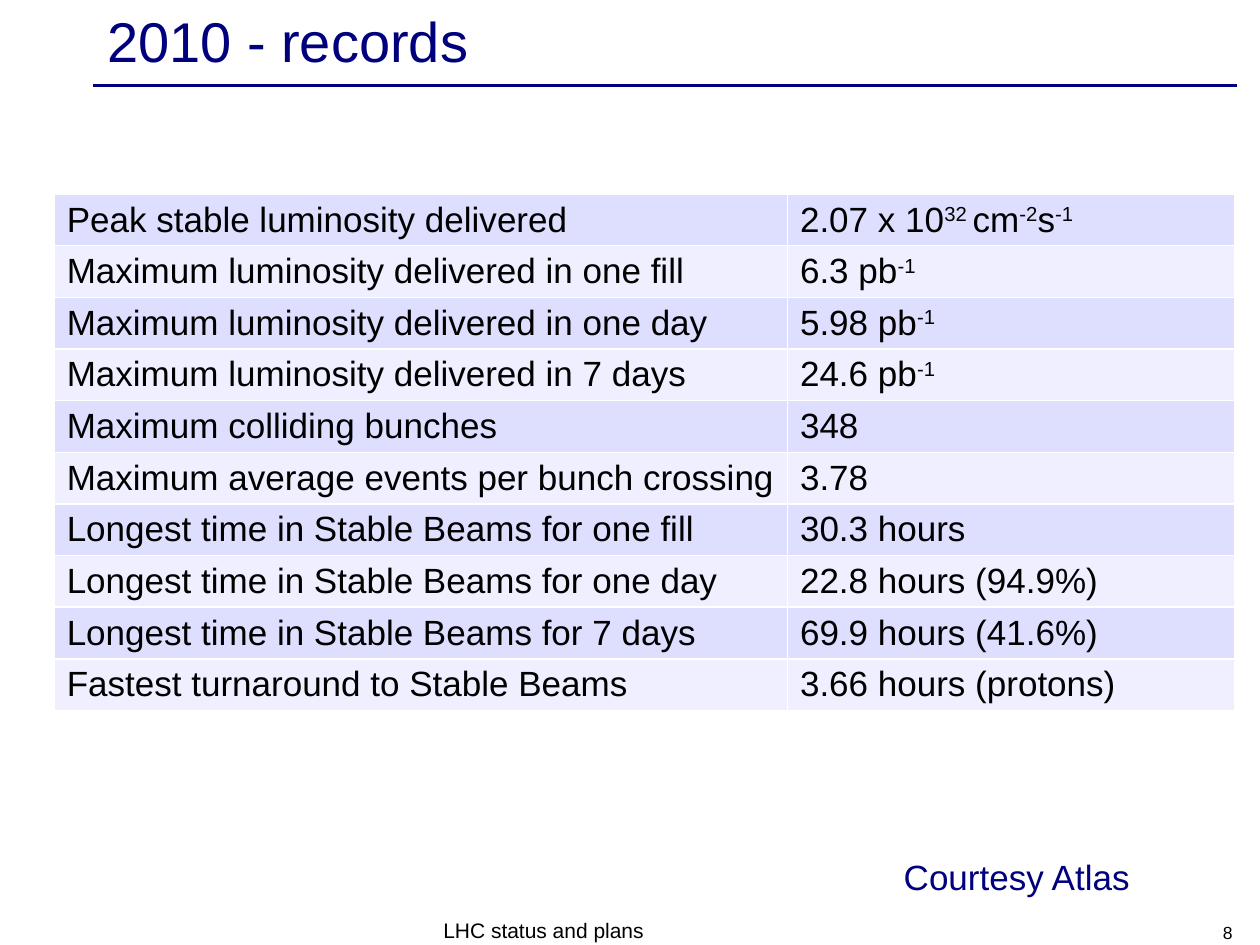
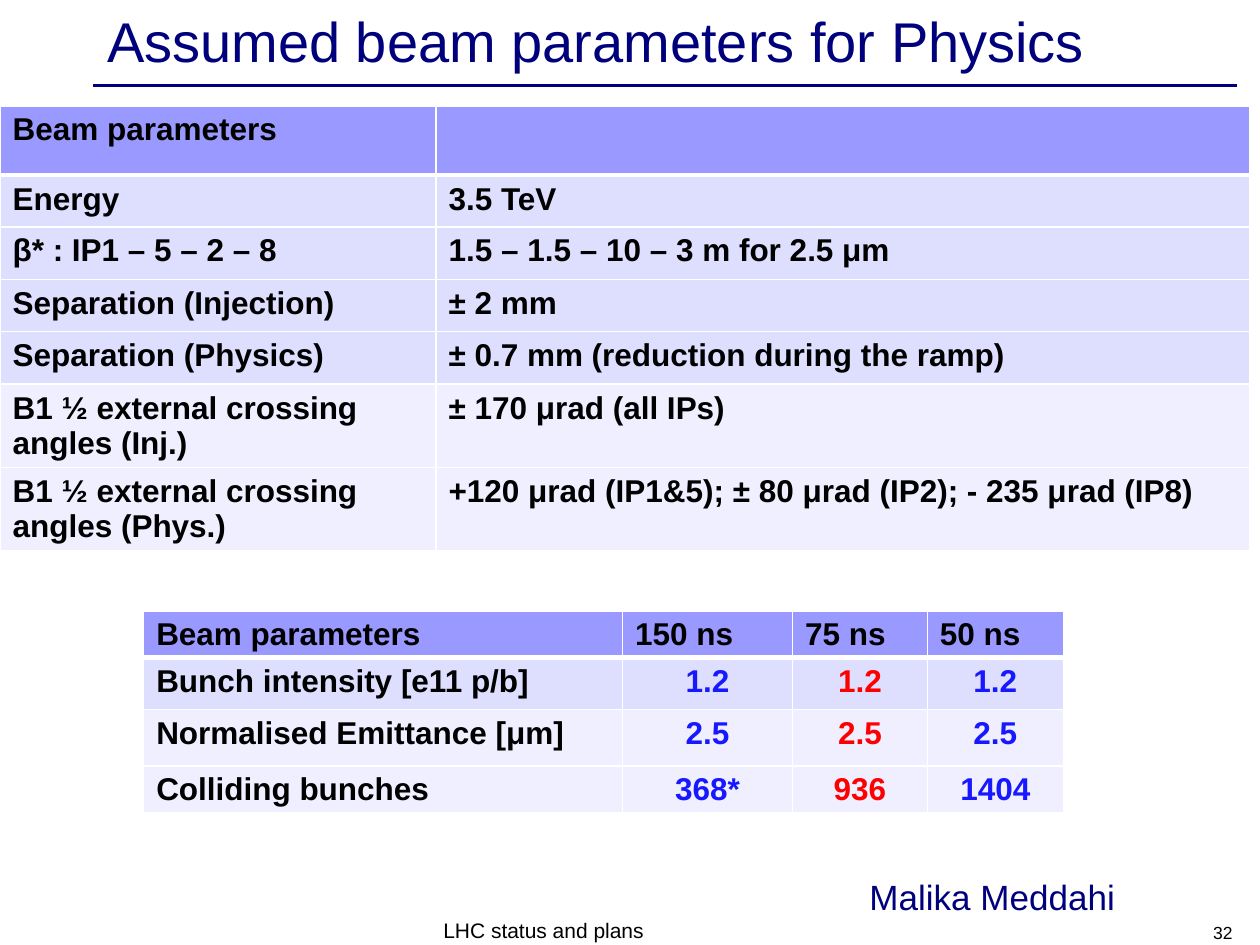
from dataclasses import dataclass

from lxml.etree import SubElement
from pptx import Presentation
from pptx.dml.color import RGBColor
from pptx.enum.shapes import MSO_CONNECTOR as Connector
from pptx.enum.text import MSO_ANCHOR as Anchor, PP_ALIGN as Align
from pptx.oxml import parse_xml
from pptx.oxml.ns import nsdecls, qn
from pptx.util import Inches, Pt


@dataclass(frozen=True)
class Theme:
    """Colours, font and type sizes shared by all slides."""

    font: str = "Arial"
    navy: str = "00007D"
    black: str = "000000"
    white: str = "FFFFFF"
    blue: str = "1818FF"
    red: str = "FF0000"
    header: str = "9999FF"
    band: str = "DEDEFF"
    pale: str = "EFEFFF"
    title_size: int = 32
    large_size: int = 20
    table_size: int = 18
    footer_size: int = 12
    number_size: int = 10
    thin: int = 1
    thick: int = 3


THEME = Theme()

RECORDS = [
    ("Peak stable luminosity delivered", "2.07 x 10^32 ^cm^-2^s^-1"),
    ("Maximum luminosity delivered in one fill", "6.3 pb^-1"),
    ("Maximum luminosity delivered in one day", "5.98 pb^-1"),
    ("Maximum luminosity delivered in 7 days", "24.6 pb^-1"),
    ("Maximum colliding bunches", "348"),
    ("Maximum average events per bunch crossing", "3.78"),
    ("Longest time in Stable Beams for one fill", "30.3 hours"),
    ("Longest time in Stable Beams for one day", "22.8 hours (94.9%)"),
    ("Longest time in Stable Beams for 7 days", "69.9 hours (41.6%)"),
    ("Fastest turnaround to Stable Beams", "3.66 hours (protons)"),
]

BEAM_SETTINGS = [
    ("Beam parameters", ""),
    ("Energy", "3.5 TeV"),
    ("β* : IP1 – 5 – 2 – 8", "1.5 – 1.5 – 10 – 3 m for 2.5 μm"),
    ("Separation (Injection)", "± 2 mm"),
    ("Separation (Physics)", "± 0.7 mm (reduction during the ramp)"),
    ("B1 ½ external crossing angles (Inj.)", "± 170 μrad (all IPs)"),
    ("B1 ½ external crossing angles (Phys.)",
     "+120 μrad (IP1&5); ± 80 μrad (IP2); - 235 μrad (IP8)"),
]

BUNCH_SPACINGS = [
    ("Beam parameters", "150 ns", "75 ns", "50 ns"),
    ("Bunch intensity [e11 p/b]", "1.2", "1.2", "1.2"),
    ("Normalised Emittance [μm]", "2.5", "2.5", "2.5"),
    ("Colliding bunches", "368*", "936", "1404"),
]


def write_text(frame, text, size, color=THEME.black, bold=False,
               align=Align.LEFT, anchor=Anchor.TOP):
    """Write one paragraph, raising every second part between carets."""
    frame.word_wrap = True
    frame.vertical_anchor = anchor
    para = frame.paragraphs[0]
    para.alignment = align
    para.space_before = Pt(0)
    for index, part in enumerate(text.split("^")):
        span = para.add_run()
        span.text = part
        span.font.name = THEME.font
        span.font.size = Pt(size)
        span.font.bold = bold
        span.font.color.rgb = RGBColor.from_string(color)
        if index % 2:
            span.font._element.set("baseline", "30000")


def add_text(page, text, left, top, width, height, **text_format):
    """Add a text box holding one formatted paragraph."""
    box = page.shapes.add_textbox(
        Inches(left), Inches(top), Inches(width), Inches(height))
    write_text(box.text_frame, text, **text_format)


def add_rule(page):
    """Draw the square-ended line under the title."""
    rule = page.shapes.add_connector(
        Connector.STRAIGHT, Inches(0.75), Inches(0.68), Inches(9.8), Inches(0.68))
    rule.line.color.rgb = RGBColor.from_string(THEME.navy)
    rule.line.width = Pt(2)
    rule._element.spPr.find(qn("a:ln")).set("cap", "sq")
    SubElement(rule._element.spPr, qn("a:effectLst"))


def add_page(deck, title, number):
    """Add a slide with its title, rule, footer and number."""
    page = deck.slides.add_slide(deck.slide_layouts[5])
    heading = page.shapes.title
    heading.left, heading.top = Inches(0.75), Inches(0.03)
    heading.width, heading.height = Inches(9), Inches(0.57)
    write_text(heading.text_frame, title, THEME.title_size, THEME.navy,
               anchor=Anchor.MIDDLE)
    add_rule(page)
    add_text(page, "LHC status and plans", 3.42, 7.25, 3.17, 0.28,
             size=THEME.footer_size, anchor=Anchor.BOTTOM)
    add_text(page, str(number), 7.55, 7.25, 2.33, 0.28,
             size=THEME.number_size, align=Align.RIGHT, anchor=Anchor.BOTTOM)
    return page


def set_borders(cell, **widths):
    """Give a cell white borders, with widths in points by side."""
    properties = cell._tc.get_or_add_tcPr()
    for index, side in enumerate("LRTB"):
        width = Pt(widths.get(side, THEME.thin))
        properties.insert(index, parse_xml(
            f'<a:ln{side} {nsdecls("a")} w="{width}"><a:solidFill>'
            f'<a:srgbClr val="{THEME.white}"/></a:solidFill></a:ln{side}>'))


def add_table(page, rows, left, top, widths, heights, fills, cell_format,
              has_header=False):
    """Add a table with one fill per row and a format rule per cell."""
    frame = page.shapes.add_table(
        len(rows), len(widths), Inches(left), Inches(top),
        Inches(sum(widths)), Inches(sum(heights)))
    table = frame.table
    table.first_row = has_header
    table.horz_banding = False
    for column, width in zip(table.columns, widths):
        column.width = Inches(width)
    for row_index, (texts, height, fill) in enumerate(zip(rows, heights, fills)):
        table.rows[row_index].height = Inches(height)
        for column_index, text in enumerate(texts):
            cell = table.cell(row_index, column_index)
            cell.margin_bottom = Inches(0.01)
            cell.fill.solid()
            cell.fill.fore_color.rgb = RGBColor.from_string(fill)
            borders = {}
            if has_header and row_index < 2:
                borders["TB"[row_index == 0]] = THEME.thick
            set_borders(cell, **borders)
            write_text(cell.text_frame, text, **cell_format(row_index, column_index))


def record_format(row, column):
    """Format every record cell alike."""
    return {"size": THEME.large_size}


def setting_format(row, column):
    """Format every beam setting in bold."""
    return {"size": THEME.table_size, "bold": True}


def spacing_format(row, column):
    """Centre and colour the values beside and below the labels."""
    base = setting_format(row, column)
    if row == 0 or column == 0:
        return base
    color = THEME.red if column == 2 else THEME.blue
    return {**base, "color": color, "align": Align.CENTER}


def add_credit(page, text, left, top, width):
    """Add the centred credit near the foot of the slide."""
    add_text(page, text, left, top, width, 0.44, size=THEME.large_size,
             color=THEME.navy, align=Align.CENTER)


def add_records_page(deck):
    """Build the slide of records."""
    page = add_page(deck, "2010 - records", 8)
    add_table(page, RECORDS, 0.43, 1.54, [5.82, 3.55], [0.41] * 10,
              [THEME.band, THEME.pale] * 5, record_format)
    add_credit(page, "Courtesy Atlas", 6.89, 6.74, 2.36)


def add_parameters_page(deck):
    """Build the slide of beam parameters."""
    page = add_page(deck, "Assumed beam parameters for Physics", 32)
    add_table(page, BEAM_SETTINGS, 0, 0.84, [3.46, 6.46],
              [0.55] + [0.41, 0.42] * 2 + [0.66, 0.65],
              [THEME.header] + [THEME.band] * 4 + [THEME.pale] * 2,
              setting_format, has_header=True)
    add_table(page, BUNCH_SPACINGS, 1.14, 4.85, [3.8, 1.35, 1.07, 1.08],
              [0.37, 0.41, 0.45, 0.37],
              [THEME.header, THEME.band, THEME.pale, THEME.pale],
              spacing_format, has_header=True)
    add_credit(page, "Malika Meddahi", 6.34, 6.9, 3.07)


def main():
    """Build and save the deck."""
    deck = Presentation()
    deck.slide_width, deck.slide_height = Inches(10), Inches(7.5)
    add_records_page(deck)
    add_parameters_page(deck)
    deck.save("out.pptx")


if __name__ == "__main__":
    main()
